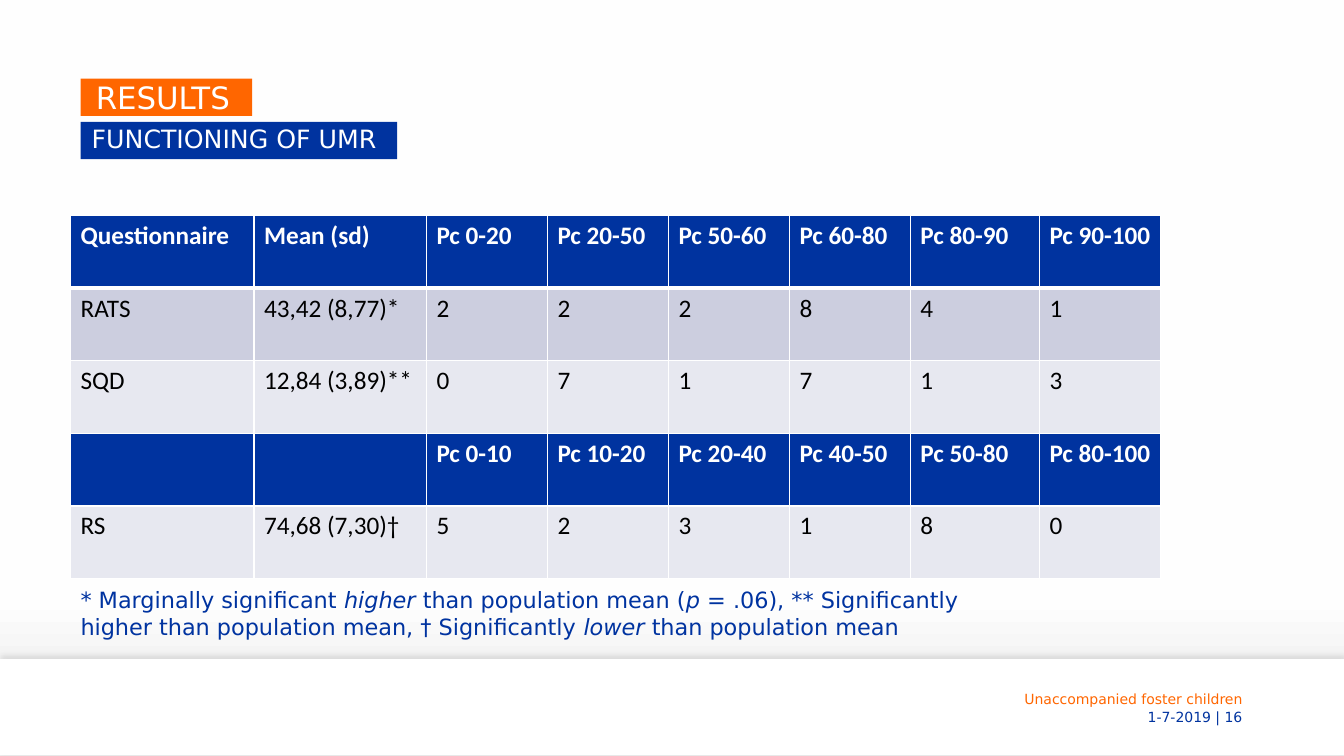
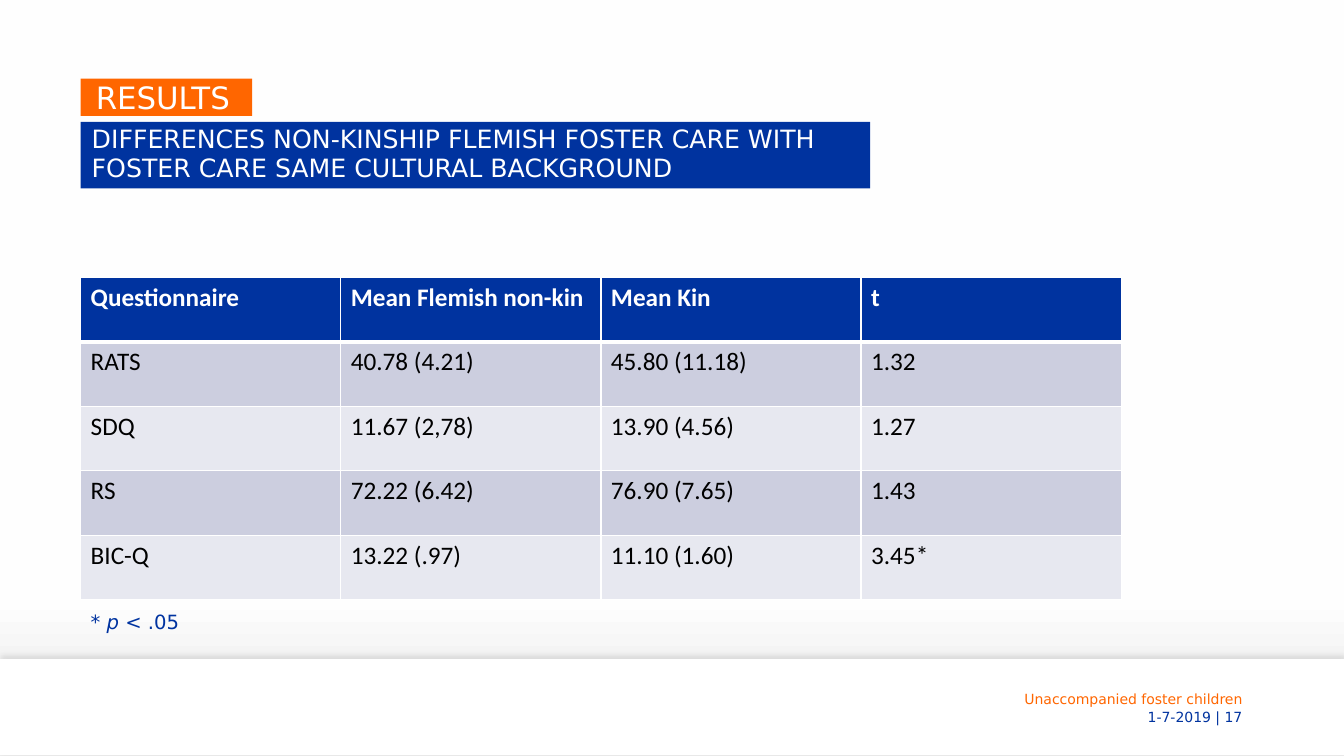
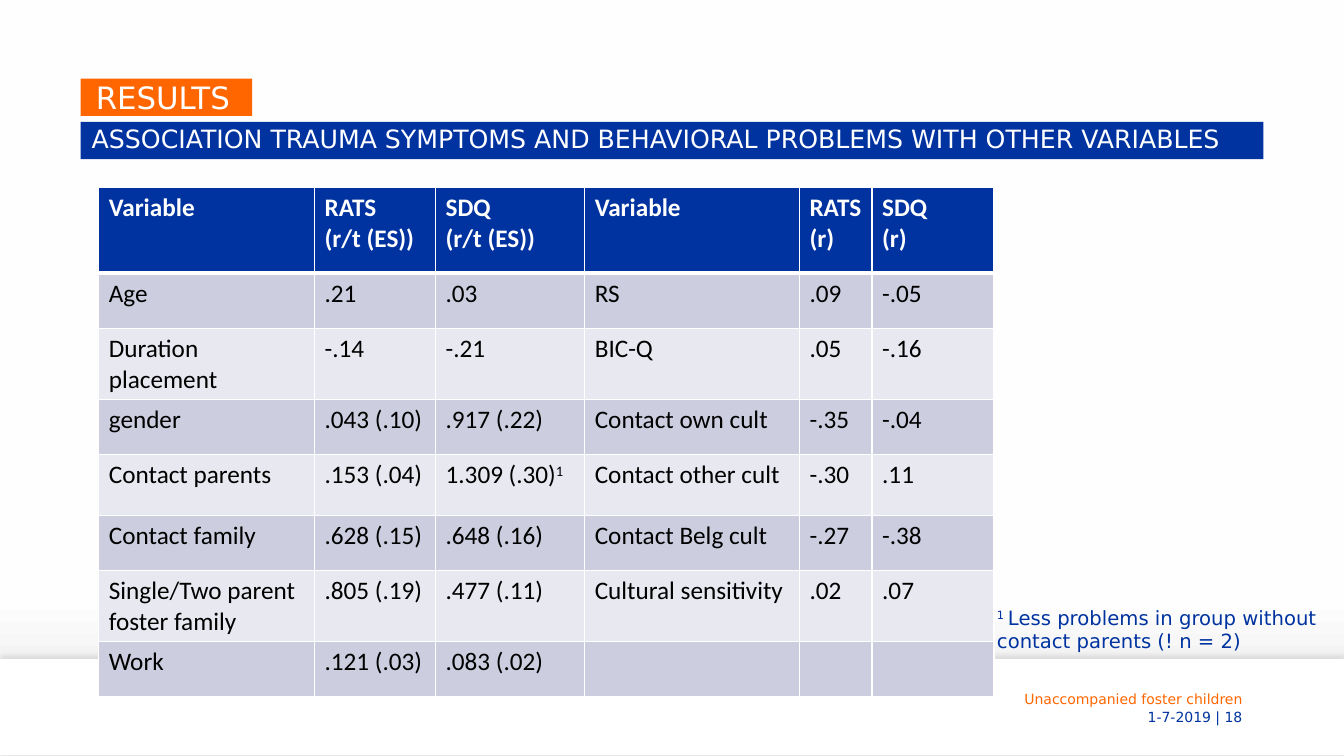
from lxml.etree import SubElement
from pptx import Presentation
from pptx.dml.color import RGBColor
from pptx.enum.shapes import MSO_SHAPE
from pptx.enum.text import MSO_ANCHOR, MSO_AUTO_SIZE, PP_ALIGN
from pptx.oxml.ns import qn
from pptx.util import Inches, Pt

BLUE, ORANGE, WHITE, BLACK = "00339F", "FF6600", "FFFFFF", "000000"
NOTE_BLUE, ODD_ROW, EVEN_ROW = "0033A0", "CCCEDF", "E7E8F0"


def colour(value):
    return RGBColor.from_string(value)


def set_all(target, values):
    for name, value in values.items():
        setattr(target, name, value)


def add_colour(parent, value):
    fill = SubElement(parent, qn("a:solidFill"))
    return SubElement(fill, qn("a:srgbClr"), val=value)


class ResultsDeck:
    """Holds the shared style and the slide being filled."""

    sans = "DejaVu Sans"
    table_font = "Calibri"
    first_number = 16

    def __init__(self):
        self.deck = Presentation()
        set_all(self.deck, {"slide_width": Inches(13.33), "slide_height": Inches(7.5)})
        fill = self.deck.slide_master.background.fill
        fill.gradient()
        fill.gradient_angle = 270
        for stop, (position, value) in zip(fill.gradient_stops, [(0.79, "FEFEFE"), (0.92, "EDEDED")]):
            stop.position = position
            stop.color.rgb = colour(value)
        self.page = None

    def add_page(self, subtitle, width, height=0.37):
        self.page = self.deck.slides.add_slide(self.deck.slide_layouts[0])
        number = self.first_number + len(self.deck.slides) - 1
        self.add_band()
        self.add_footer("Unaccompanied foster children", 6.85, 0.17, ORANGE)
        self.add_footer(f"1-7-2019 | {number}", 7.02, 0.19, BLUE)
        title, subtitle_box = self.page.placeholders
        self.add_label(title, "RESULTS", (0.8, 0.78, 1.7, 0.37), ORANGE, 22,
                       {"margin_left": Inches(0.15), "margin_right": Inches(0.16),
                        "margin_bottom": 0, "vertical_anchor": MSO_ANCHOR.BOTTOM}, 0.9)
        self.add_label(subtitle_box, subtitle, (0.8, 1.21, width, height), BLUE, 18,
                       {"margin_left": Inches(0.11), "margin_right": Inches(0.1),
                        "margin_bottom": Inches(0.04), "vertical_anchor": MSO_ANCHOR.TOP}, 0.95)

    def add_band(self):
        band = self.page.shapes.add_shape(
            MSO_SHAPE.RECTANGLE, 0, Inches(6.54), self.deck.slide_width, Inches(0.95))
        band.fill.solid()
        band.fill.fore_color.rgb = colour(WHITE)
        band.line.fill.background()
        band.shadow.inherit = False
        effects = band._element.spPr.find(qn("a:effectLst"))
        shadow = SubElement(effects, qn("a:outerShdw"), blurRad=str(Pt(4)), dist=str(Pt(3)),
                            dir="16200000", rotWithShape="0")
        tint = SubElement(shadow, qn("a:srgbClr"), val=BLACK)
        SubElement(tint, qn("a:alpha"), val="10000")

    def add_footer(self, text, top, height, value):
        box = self.page.shapes.add_textbox(Inches(9.42), Inches(top), Inches(3), Inches(height))
        set_all(box.text_frame, {"word_wrap": True, "margin_top": 0, "margin_bottom": 0,
                                 "vertical_anchor": MSO_ANCHOR.MIDDLE})
        self.add_text(box.text_frame, [text], self.sans, 10, value, {"alignment": PP_ALIGN.RIGHT})

    def add_label(self, box, text, place, value, size, frame_format, spacing):
        set_all(box, dict(zip(("left", "top", "width", "height"), map(Inches, place))))
        box.fill.solid()
        box.fill.fore_color.rgb = colour(value)
        set_all(box.text_frame, {"word_wrap": True, "auto_size": MSO_AUTO_SIZE.NONE,
                                 "margin_top": Inches(0.04), **frame_format})
        self.add_text(box.text_frame, [text], self.sans, size, WHITE,
                      {"alignment": PP_ALIGN.LEFT, "line_spacing": spacing, "space_before": Pt(0)})

    def add_note(self, paragraphs, place, size):
        box = self.page.shapes.add_textbox(*map(Inches, place))
        box.text_frame.word_wrap = True
        self.add_text(box.text_frame, paragraphs, self.sans, size, NOTE_BLUE)

    def add_table(self, place, widths, heights, rows, heads=(0,)):
        left, top = map(Inches, place)
        table = self.page.shapes.add_table(
            len(rows), len(widths), left, top, Inches(sum(widths)), Inches(sum(heights))).table
        for column, width in zip(table.columns, widths):
            column.width = Inches(width)
        for row, height in zip(table.rows, heights):
            row.height = Inches(height)
        for index, row in enumerate(rows):
            head = index in heads
            fill = BLUE if head else ODD_ROW if index % 2 else EVEN_ROW
            for cell, content in zip(table.rows[index].cells, row):
                self.add_borders(cell, 3 if index == 1 else 1, 3 if index == 0 else 1)
                cell.fill.solid()
                cell.fill.fore_color.rgb = colour(fill)
                if content:
                    paragraphs = content.split("\n") if isinstance(content, str) else [content]
                    self.add_text(cell.text_frame, paragraphs, self.table_font, 18,
                                  WHITE if head else BLACK, bold=head)

    def add_borders(self, cell, top, bottom):
        properties = cell._tc.get_or_add_tcPr()
        for side, weight in {"L": 1, "R": 1, "T": top, "B": bottom}.items():
            line = SubElement(properties, qn(f"a:ln{side}"), w=str(Pt(weight)))
            add_colour(line, WHITE)

    def add_text(self, frame, paragraphs, font, size, value, para_format=None, bold=False):
        for index, spans in enumerate(paragraphs):
            para = frame.add_paragraph() if index else frame.paragraphs[0]
            set_all(para, para_format or {})
            for item in [spans] if isinstance(spans, str) else spans:
                text, style = (item, "") if isinstance(item, str) else item
                for line_index, line in enumerate(text.split("\v")):
                    if line_index:
                        para.add_line_break()
                    span = para.add_run()
                    span.text = line
                    set_all(span.font, {"name": font, "size": Pt(size), "bold": bold,
                                        "italic": style == "italic"})
                    span.font.color.rgb = colour(value)
                    if style == "super":
                        span._r.get_or_add_rPr().set("baseline", "30000")


def main():
    results = ResultsDeck()

    results.add_page("FUNCTIONING OF UMR", 3.14)
    results.add_table(
        (0.7, 2.14), [1.82, 1.71, 1.2, 1.2, 1.2, 1.2, 1.28, 1.2], [0.72] * 5,
        [
            ["Questionnaire", "Mean (sd)", "Pc 0-20", "Pc 20-50", "Pc 50-60",
             "Pc 60-80", "Pc 80-90", "Pc 90-100"],
            ["RATS", "43,42 (8,77)*", "2", "2", "2", "8", "4", "1"],
            ["SQD", "12,84 (3,89)**", "0", "7", "1", "7", "1", "3"],
            ["", "", "Pc 0-10", "Pc 10-20", "Pc 20-40", "Pc 40-50", "Pc 50-80", "Pc 80-100"],
            ["RS", "74,68 (7,30)†", "5", "2", "3", "1", "8", "0"],
        ], heads=(0, 3))
    results.add_note(
        [
            ["* Marginally significant ", ("higher ", "italic"), "than population mean (",
             ("p", "italic"), " = .06), ** Significantly"],
            ["higher than population mean, † Significantly ", ("lower ", "italic"),
             "than population mean"],
        ], (0.7, 5.77, 9.18, 0.94), 16)

    results.add_page(
        "DIFFERENCES NON-KINSHIP FLEMISH FOSTER CARE WITH\vFOSTER CARE SAME CULTURAL BACKGROUND",
        7.83, 0.66)
    results.add_table(
        (0.8, 2.75), [2.58] * 4, [0.64] * 5,
        [
            ["Questionnaire", "Mean Flemish non-kin", "Mean Kin", "t"],
            ["RATS", "40.78 (4.21)", "45.80 (11.18)", "1.32"],
            ["SDQ", "11.67 (2,78)", "13.90 (4.56)", "1.27"],
            ["RS", "72.22 (6.42)", "76.90 (7.65)", "1.43"],
            ["BIC-Q", "13.22 (.97)", "11.10 (1.60)", "3.45*"],
        ])
    results.add_note([["* ", ("p", "italic"), " < .05"]], (0.8, 6, 1.14, 0.34), 14)

    results.add_page(
        "ASSOCIATION TRAUMA SYMPTOMS AND BEHAVIORAL PROBLEMS WITH OTHER VARIABLES", 11.73)
    results.add_table(
        (0.98, 1.86), [2.14, 1.2, 1.48, 2.13, 0.72, 1.21],
        [0.85, 0.55, 0.67, 0.55, 0.6, 0.55, 0.67, 0.55],
        [
            ["Variable", "RATS\n(r/t (ES))", "SDQ\n(r/t (ES))", "Variable", "RATS\n(r)", "SDQ\n(r)"],
            ["Age", ".21", ".03", "RS", ".09", "-.05"],
            ["Duration placement", "-.14", "-.21", "BIC-Q", ".05", "-.16"],
            ["gender", ".043 (.10)", ".917 (.22)", "Contact own cult", "-.35", "-.04"],
            ["Contact parents", ".153 (.04)", ["1.309 (.30)", ("1", "super")],
             "Contact other cult", "-.30", ".11"],
            ["Contact family", ".628 (.15)", ".648 (.16)", "Contact Belg cult", "-.27", "-.38"],
            ["Single/Two parent foster family", ".805 (.19)", ".477 (.11)",
             "Cultural sensitivity", ".02", ".07"],
            ["Work", ".121 (.03)", ".083 (.02)", "", "", ""],
        ])
    results.add_note(
        [[("1 ", "super"), "Less problems in group without contact parents (! n = 2)"]],
        (9.79, 5.96, 3.54, 0.57), 14)

    results.deck.save("out.pptx")


if __name__ == "__main__":
    main()
